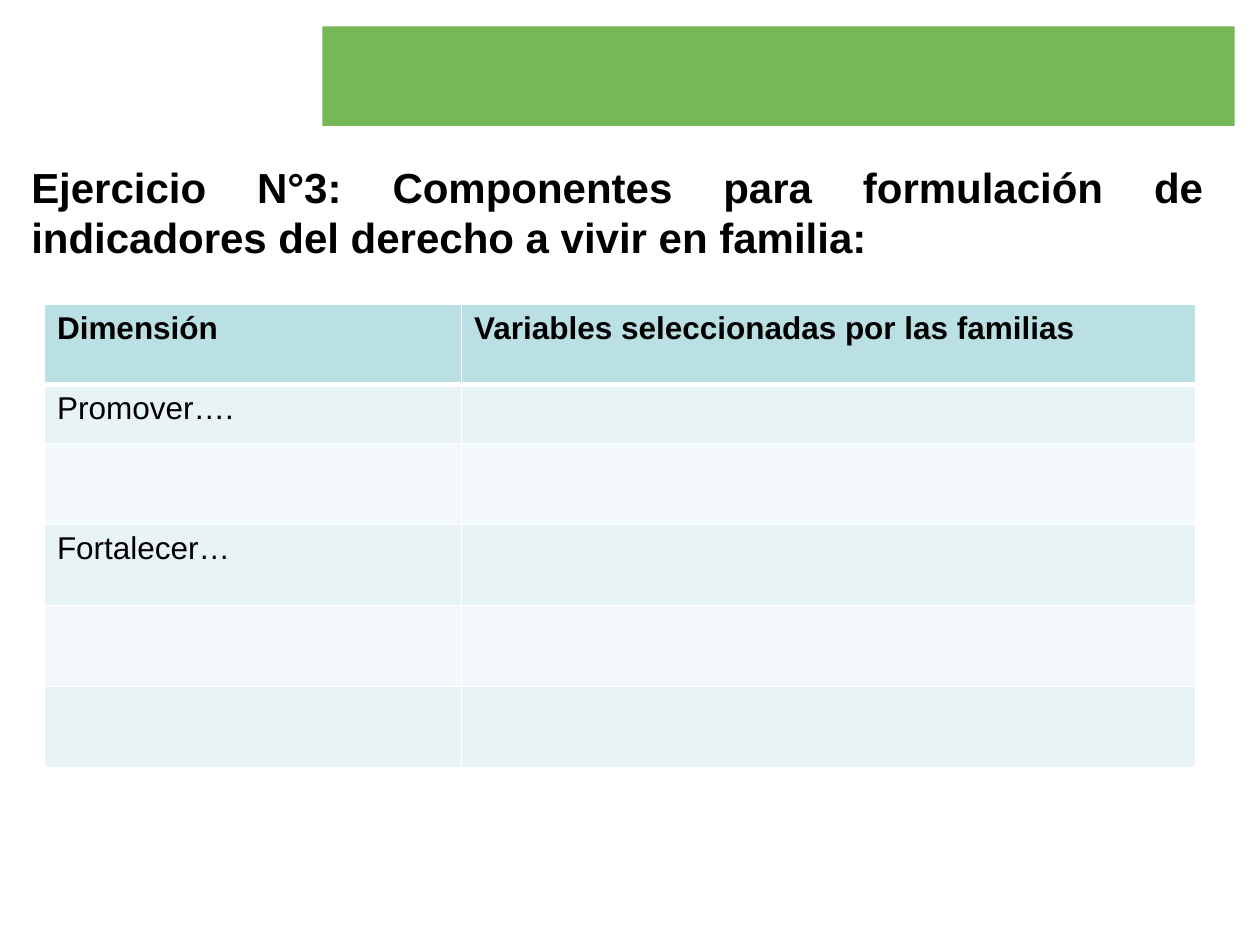
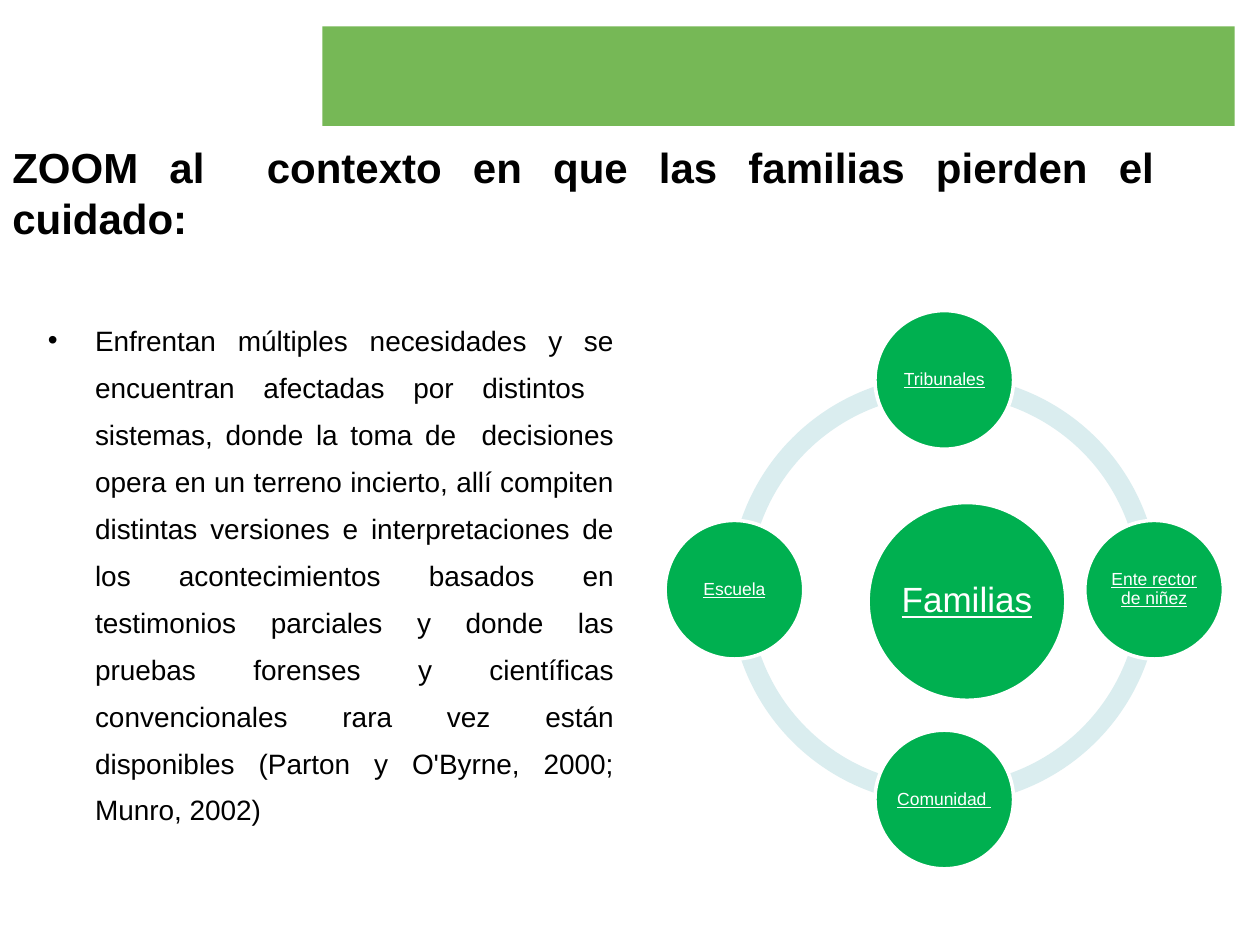
import pptx
import pptx.util
import pptx.dml.color
import pptx.enum.shapes
import pptx.enum.text
import pptx.oxml
import pptx.oxml.ns
from lxml import etree

Pt = pptx.util.Pt
Shape = pptx.enum.shapes.MSO_SHAPE
Align = pptx.enum.text.PP_ALIGN
Anchor = pptx.enum.text.MSO_ANCHOR
qn = pptx.oxml.ns.qn

HUES = {
    "band": "76B856", "head": "BBE0E3", "odd": "E7F3F4", "even": "F3F9FA",
    "node": "00B050", "ring": "DAEDEF", "ink": "000000", "white": "FFFFFF",
}


def hue(name):
    return pptx.dml.color.RGBColor.from_string(HUES[name])


class Deck:
    font = "Arial"

    def __init__(self):
        self.file = pptx.Presentation()
        self.file.slide_width = Pt(720)
        self.file.slide_height = Pt(540)

    def page(self):
        self.slide = self.file.slides.add_slide(self.file.slide_layouts[6])
        self.shape(Shape.RECTANGLE, 184.3, 15.1, 521.3, 56.9, "band")

    def style(self, para, size, color="ink", bold=False, line=False):
        for run in para.runs:
            run.font.name = self.font
            run.font.size = Pt(size)
            run.font.bold = bold
            run.font.underline = line
            run.font.color.rgb = hue(color)

    def shape(self, kind, x, y, w, h, fill, edge=None):
        item = self.slide.shapes.add_shape(kind, Pt(x), Pt(y), Pt(w), Pt(h))
        item.shadow.inherit = False
        item.fill.solid()
        item.fill.fore_color.rgb = hue(fill)
        if edge:
            item.line.color.rgb = hue(edge)
            item.line.width = Pt(2)
        else:
            item.line.fill.background()
        return item

    def text(self, words, x, y, w, h, size, bold=False, bullet=False):
        box = self.slide.shapes.add_textbox(Pt(x), Pt(y), Pt(w), Pt(h))
        frame = box.text_frame
        frame.word_wrap = True
        frame.text = words
        para = frame.paragraphs[0]
        para.alignment = Align.JUSTIFY
        if bullet:
            para.line_spacing = 1.4
            props = para._p.get_or_add_pPr()
            props.set("marL", str(Pt(27)))
            props.set("indent", str(-Pt(27)))
            etree.SubElement(props, qn("a:buFont"), typeface=self.font)
            etree.SubElement(props, qn("a:buChar"), char="•")
        self.style(para, size, bold=bold)

    def title(self, words, x, y, w):
        self.text(words, x, y, w, 66, 24, bold=True)

    def border(self, cell, base):
        props = cell._tc.get_or_add_tcPr()
        for side, width in zip("LRTB", (1, 1, 1, base)):
            line = etree.SubElement(props, qn(f"a:ln{side}"), w=str(Pt(width)))
            fill = etree.SubElement(line, qn("a:solidFill"))
            etree.SubElement(fill, qn("a:srgbClr"), val=HUES["white"])

    def table(self, rows, x, y, wides, highs):
        grid = self.slide.shapes.add_table(
            len(rows), len(wides), Pt(x), Pt(y), Pt(sum(wides)), Pt(sum(highs))
        ).table
        for col, wide in zip(grid.columns, wides):
            col.width = Pt(wide)
        for r, (row, high) in enumerate(zip(rows, highs)):
            grid.rows[r].height = Pt(high)
            fill = "head" if r == 0 else "odd" if r % 2 else "even"
            for c, words in enumerate(row):
                cell = grid.cell(r, c)
                self.border(cell, 3 if r == 0 else 1)
                cell.fill.solid()
                cell.fill.fore_color.rgb = hue(fill)
                if words:
                    cell.text = words
                    self.style(cell.text_frame.paragraphs[0], 18, bold=r == 0)

    def node(self, words, x, y, wide, size, pad):
        item = self.shape(Shape.OVAL, x - wide / 2, y - wide / 2, wide, wide,
                          "node", "white")
        frame = item.text_frame
        frame.word_wrap = True
        frame.vertical_anchor = Anchor.MIDDLE
        frame.margin_left = frame.margin_right = Pt(pad)
        frame.margin_top = frame.margin_bottom = Pt(pad)
        frame.text = words
        para = frame.paragraphs[0]
        para.alignment = Align.CENTER
        para.line_spacing = 0.9
        self.style(para, size, "white", line=True)

    def ring(self, x, y, wide):
        for start in (108, 54, 0, 162):
            arc = self.shape(Shape.BLOCK_ARC, x - wide / 2, y - wide / 2,
                             wide, wide, "ring")
            arc.adjustments[0] = start
            arc.adjustments[1] = (start + 54) % 216
            arc.adjustments[2] = 0.046


def main():
    deck = Deck()

    deck.page()
    deck.title("Ejercicio N°3: Componentes para formulación de indicadores "
               "del derecho a vivir en familia:", 10.8, 88.6, 684)
    rows = [
        ("Dimensión", "Variables seleccionadas por las familias"),
        ("Promover….", ""),
        ("", ""),
        ("Fortalecer…", ""),
        ("", ""),
        ("", ""),
    ]
    deck.table(rows, 25.4, 173.8, (238.3, 419.6), (45.8, 33.8) + (46.3,) * 4)

    deck.page()
    deck.title("ZOOM al  contexto en que las familias pierden el cuidado:",
               0, 77.6, 666.7)
    deck.text(
        "Enfrentan múltiples necesidades y se encuentran afectadas por "
        "distintos  sistemas, donde la toma de  decisiones opera en un "
        "terreno incierto, allí compiten distintas versiones e "
        "interpretaciones de los acontecimientos basados en testimonios "
        "parciales y donde las pruebas forenses y científicas convencionales "
        "rara vez están disponibles (Parton y O'Byrne, 2000; Munro, 2002)",
        20.2, 173.5, 337.7, 308.9, 16, bullet=True)
    x, y, reach = 539.6, 337, 119.9
    deck.ring(x, y, 245.5)
    deck.node("Familias", 552.6, 343.7, 113, 20, 2)
    nodes = [
        ("Tribunales", 0, -1),
        ("Ente rector de niñez", 1, 0),
        ("Comunidad ", 0, 1),
        ("Escuela", -1, 0),
    ]
    for words, right, down in nodes:
        deck.node(words, x + right * reach, y + down * reach, 79.2, 10, 1)

    deck.file.save("out.pptx")


if __name__ == "__main__":
    main()
